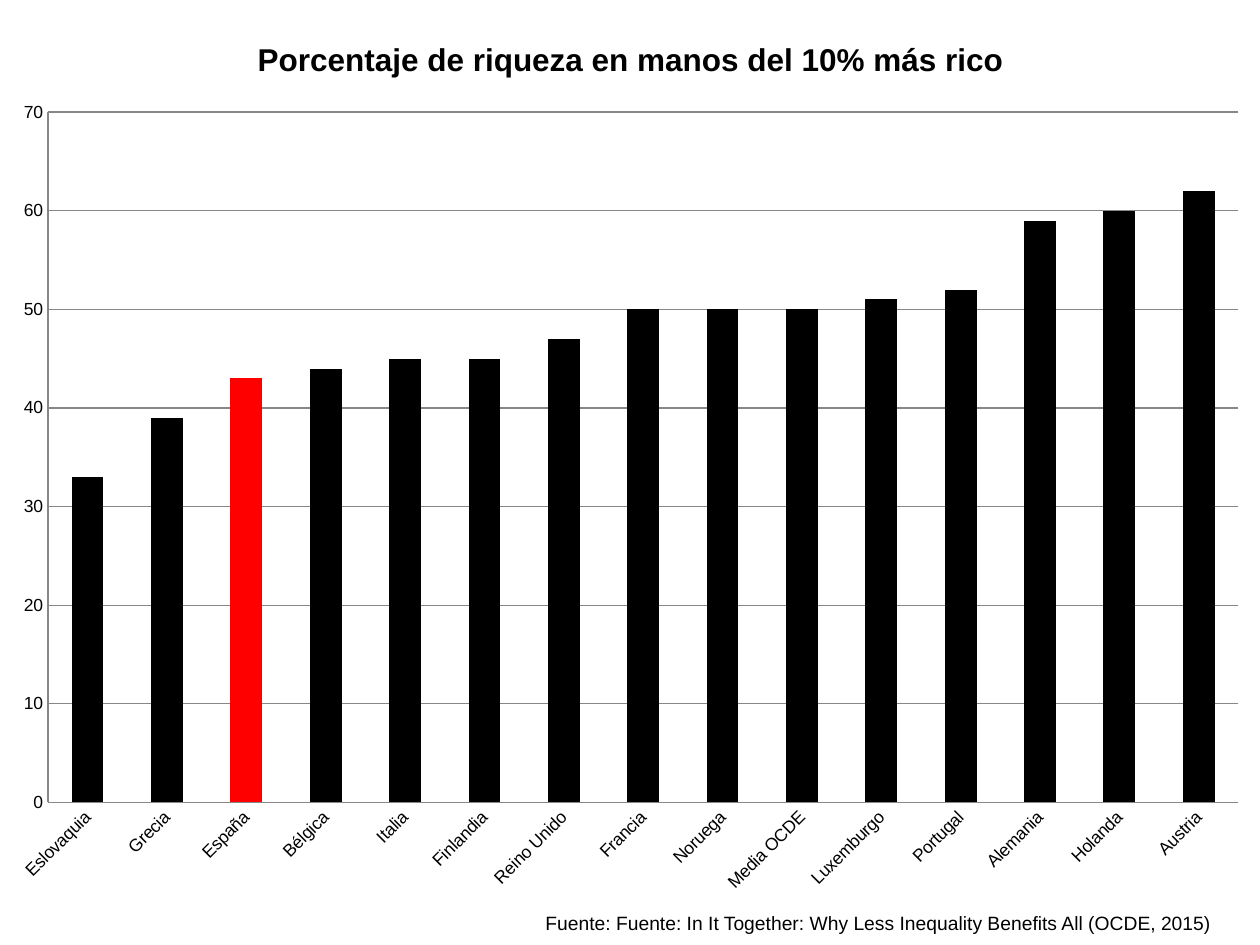
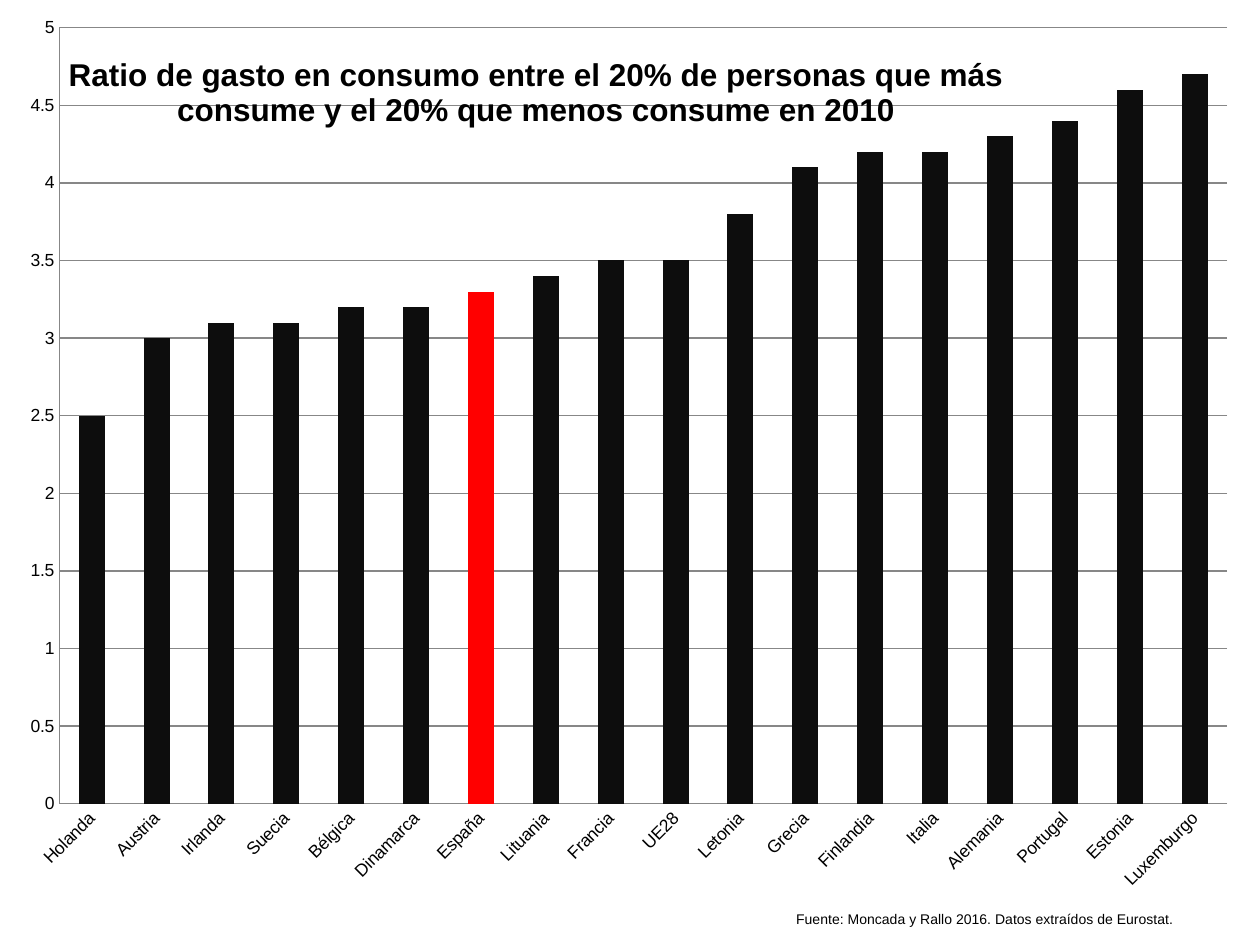
from dataclasses import dataclass
from typing import Any

from lxml.etree import SubElement
from pptx import Presentation
from pptx.chart.chart import Chart
from pptx.chart.data import CategoryChartData
from pptx.dml.color import RGBColor
from pptx.enum.chart import XL_CHART_TYPE, XL_TICK_MARK
from pptx.oxml.ns import qn
from pptx.slide import Slide
from pptx.util import Inches, Pt

COLORS = {"text": "000000", "black": "000000", "ink": "0D0D0D",
          "highlight": "FF0000", "grid": "878787"}
LABEL_FORMAT = {"name": "Arial", "size": Pt(10), "bold": False}
TITLE_FORMAT = {"name": "Arial", "size": Pt(18), "bold": True}
LABEL_SLANT = {"rot": "-2700000", "vert": "horz"}
HIGHLIGHTED = "España"


@dataclass
class RankingSlide:
    """A ranking of countries with its places on the slide in inches."""
    title: str
    title_at: tuple[float, float]
    values: dict[str, float]
    bar_color: str
    box: tuple[float, float, float, float]
    plot: tuple[float, float, float, float]
    scale: tuple[float, float]
    source: str
    source_box: tuple[float, float, float, float]
    source_size: int


RANKINGS = [
    RankingSlide(
        title="Porcentaje de riqueza en manos del 10% más rico",
        title_at=(2, 0.26),
        values={"Eslovaquia": 33, "Grecia": 39, "España": 43, "Bélgica": 44,
                "Italia": 45, "Finlandia": 45, "Reino Unido": 47, "Francia": 50,
                "Noruega": 50, "Media OCDE": 50, "Luxemburgo": 51,
                "Portugal": 52, "Alemania": 59, "Holanda": 60, "Austria": 62},
        bar_color="black",
        box=(-0.04, 0.09, 10.07, 7.13),
        plot=(0.38, 0.89, 9.45, 5.48),
        scale=(70, 10),
        source="Fuente: Fuente: In It Together: Why Less Inequality Benefits All (OCDE, 2015)",
        source_box=(4.23, 7.18, 5.65, 0.32),
        source_size=11,
    ),
    RankingSlide(
        title="Ratio de gasto en consumo entre el 20% de personas que más "
              "consume y el 20% que menos consume en 2010",
        title_at=(0.5, 0.38),
        values={"Holanda": 2.5, "Austria": 3, "Irlanda": 3.1, "Suecia": 3.1,
                "Bélgica": 3.2, "Dinamarca": 3.2, "España": 3.3, "Lituania": 3.4,
                "Francia": 3.5, "UE28": 3.5, "Letonia": 3.8, "Grecia": 4.1,
                "Finlandia": 4.2, "Italia": 4.2, "Alemania": 4.3,
                "Portugal": 4.4, "Estonia": 4.6, "Luxemburgo": 4.7},
        bar_color="ink",
        box=(0.08, 0.12, 9.84, 7.18),
        plot=(0.47, 0.22, 9.27, 6.16),
        scale=(5, 0.5),
        source="Fuente: Moncada y Rallo 2016. Datos extraídos de Eurostat.",
        source_box=(6.22, 7.18, 3.45, 0.32),
        source_size=8,
    ),
]


def rgb(name: str) -> RGBColor:
    """Return a named palette colour."""
    return RGBColor.from_string(COLORS[name])


def apply(target: Any, values: dict[str, Any]) -> None:
    """Set each value as an attribute of the target."""
    for name, value in values.items():
        setattr(target, name, value)


def format_font(font: Any, values: dict[str, Any]) -> None:
    """Give a font its format values and the text colour."""
    apply(font, values)
    font.color.rgb = rgb("text")


def fill(fmt: Any, color: str) -> None:
    """Fill a bar with a plain palette colour."""
    fmt.fill.solid()
    fmt.fill.fore_color.rgb = rgb(color)


def set_layout(part: Any, box: tuple[float, ...], place: tuple[float, ...]) -> None:
    """Put a chart part at a place on the slide, as fractions of the chart box."""
    layout = part.find(qn("c:layout"))
    if layout is None:
        layout = SubElement(part, qn("c:layout"))
        part.insert(0, layout)
    left, top, width, height = box
    values = {"xMode": "edge", "yMode": "edge",
              "x": (place[0] - left) / width, "y": (place[1] - top) / height}
    if len(place) == 4:
        values = {"layoutTarget": "inner", **values,
                  "w": place[2] / width, "h": place[3] / height}
    manual = SubElement(layout, qn("c:manualLayout"))
    for name, value in values.items():
        SubElement(manual, qn(f"c:{name}")).set("val", str(value))


def format_title(chart: Chart, ranking: RankingSlide) -> None:
    """Write the chart title over the plot."""
    title = chart.chart_title
    r = title.text_frame.paragraphs[0].add_run()
    r.text = ranking.title
    format_font(r.font, TITLE_FORMAT)
    set_layout(title.element, ranking.box, ranking.title_at)
    title.element.find(qn("c:overlay")).set("val", "1")


def format_axes(chart: Chart, ranking: RankingSlide) -> None:
    """Set the scale, gridlines and slanted country labels."""
    maximum, step = ranking.scale
    value_axis, category_axis = chart.value_axis, chart.category_axis
    apply(value_axis, {"minimum_scale": 0, "maximum_scale": maximum,
                       "major_unit": step, "has_major_gridlines": True})
    for axis in (value_axis, category_axis):
        apply(axis, {"major_tick_mark": XL_TICK_MARK.NONE,
                     "minor_tick_mark": XL_TICK_MARK.NONE})
        apply(axis.tick_labels, {"number_format": "General",
                                 "number_format_is_linked": False})
        format_font(axis.tick_labels.font, LABEL_FORMAT)
    for part in (value_axis, category_axis, value_axis.major_gridlines):
        part.format.line.color.rgb = rgb("grid")
        part.format.line.width = Pt(0.75)
    labels = chart.element.find(f".//{qn('c:catAx')}/{qn('c:txPr')}/{qn('a:bodyPr')}")
    for name, value in LABEL_SLANT.items():
        labels.set(name, value)


def add_ranking_chart(s: Slide, ranking: RankingSlide) -> None:
    """Draw the country columns with the highlighted one in red."""
    data = CategoryChartData()
    data.categories = list(ranking.values)
    data.add_series("Series 1", list(ranking.values.values()))
    chart = s.shapes.add_chart(XL_CHART_TYPE.COLUMN_CLUSTERED,
                               *map(Inches, ranking.box), data).chart
    apply(chart, {"has_legend": False, "has_title": True})
    format_font(chart.font, LABEL_FORMAT)
    format_title(chart, ranking)
    format_axes(chart, ranking)

    plot = chart.plots[0]
    apply(plot, {"gap_width": 150, "vary_by_categories": False})
    series = plot.series[0]
    fill(series.format, ranking.bar_color)
    fill(series.points[list(ranking.values).index(HIGHLIGHTED)].format, "highlight")
    set_layout(chart.element.find(f".//{qn('c:plotArea')}"), ranking.box, ranking.plot)


def add_source(s: Slide, ranking: RankingSlide) -> None:
    """Write the source line at the foot of the slide."""
    tf = s.shapes.add_textbox(*map(Inches, ranking.source_box)).text_frame
    tf.word_wrap = True
    r = tf.paragraphs[0].add_run()
    r.text = ranking.source
    format_font(r.font, LABEL_FORMAT | {"size": Pt(ranking.source_size)})


def main() -> None:
    """Build and save the presentation."""
    prs = Presentation()
    apply(prs, {"slide_width": Inches(10), "slide_height": Inches(7.5)})
    for ranking in RANKINGS:
        s = prs.slides.add_slide(prs.slide_layouts[6])
        add_ranking_chart(s, ranking)
        add_source(s, ranking)
    prs.save("out.pptx")


if __name__ == "__main__":
    main()
